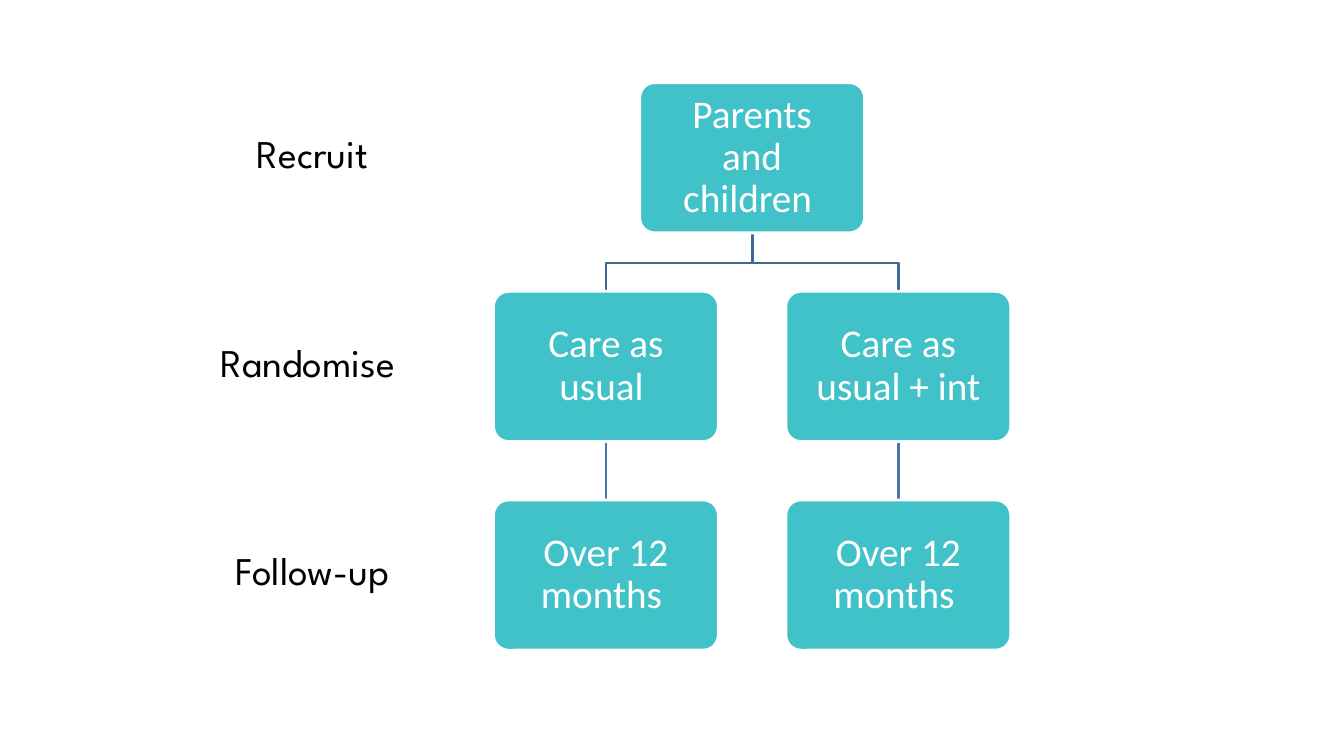
import pptx
import pptx.util
import pptx.dml.color
import pptx.enum.shapes
import pptx.enum.text
import lxml.etree
import pptx.oxml.ns

WIDE, HIGH = 2.23, 1.49
LEFT, TOP = 6.01, 0.82
COL, ROW = 1.45, 2.07
SIZE = 28


def inch(n):
    return pptx.util.Inches(n)


def tint(code):
    return pptx.dml.color.RGBColor.from_string(code)


def mid(col):
    return LEFT + col * COL


def top(row):
    return TOP + row * ROW


def write(shape, words, font, code, pad):
    frame = shape.text_frame
    frame.word_wrap = True
    frame.vertical_anchor = pptx.enum.text.MSO_ANCHOR.MIDDLE
    frame.margin_left = frame.margin_right = inch(pad)
    frame.margin_top = frame.margin_bottom = inch(pad)
    para = frame.paragraphs[0]
    para.alignment = pptx.enum.text.PP_ALIGN.CENTER
    para.line_spacing = 0.9
    run = para.add_run()
    run.text = words
    run.font.name = font
    run.font.size = pptx.util.Pt(SIZE)
    run.font.color.rgb = tint(code)


def ink(line, code):
    line.color.rgb = tint(code)
    line.width = pptx.util.Pt(2)


def label(slide, row, words):
    box = slide.shapes.add_textbox(
        inch(1.82), inch(top(row) - 0.11), inch(2.56), inch(1.67))
    write(box, words, "League Spartan", "000000", 0.22)


def card(slide, col, row, words):
    box = slide.shapes.add_shape(
        pptx.enum.shapes.MSO_SHAPE.ROUNDED_RECTANGLE,
        inch(mid(col) - WIDE / 2), inch(top(row)), inch(WIDE), inch(HIGH))
    box.adjustments[0] = 0.1
    box.shadow.inherit = False
    box.fill.solid()
    box.fill.fore_color.rgb = tint("40C2C8")
    ink(box.line, "FFFFFF")
    write(box, words, "Calibri", "FFFFFF", 0.16)


def branch(slide, start, end, row):
    foot = top(row) + HIGH
    bend = foot + 0.3
    pen = slide.shapes.build_freeform(inch(mid(start)), inch(foot))
    pen.add_line_segments(
        [(inch(mid(start)), inch(bend)), (inch(mid(end)), inch(bend)),
         (inch(mid(end)), inch(top(row + 1)))], close=False)
    bent = pen.convert_to_shape()
    bent.shadow.inherit = False
    bent.fill.background()
    ink(bent.line, "3F6797")


def stem(slide, col, row):
    line = slide.shapes.add_connector(
        pptx.enum.shapes.MSO_CONNECTOR.STRAIGHT,
        inch(mid(col)), inch(top(row) + HIGH),
        inch(mid(col)), inch(top(row + 1)))
    ink(line.line, "4875AC")
    props = line.element.spPr
    lxml.etree.SubElement(props, pptx.oxml.ns.qn("a:effectLst"))


def main():
    deck = pptx.Presentation()
    deck.slide_width, deck.slide_height = inch(13.33), inch(7.5)
    slide = deck.slides.add_slide(deck.slide_layouts[6])
    for row, words in enumerate(("Recruit", "Randomise ", "Follow-up")):
        label(slide, row, words)
    for col in (0, 2):
        branch(slide, 1, col, 0)
        stem(slide, col, 1)
    card(slide, 1, 0, "Parents and children ")
    for col, care in ((0, "Care as usual "), (2, "Care as usual + int")):
        card(slide, col, 1, care)
        card(slide, col, 2, "Over 12 months ")
    deck.save("out.pptx")


if __name__ == "__main__":
    main()
